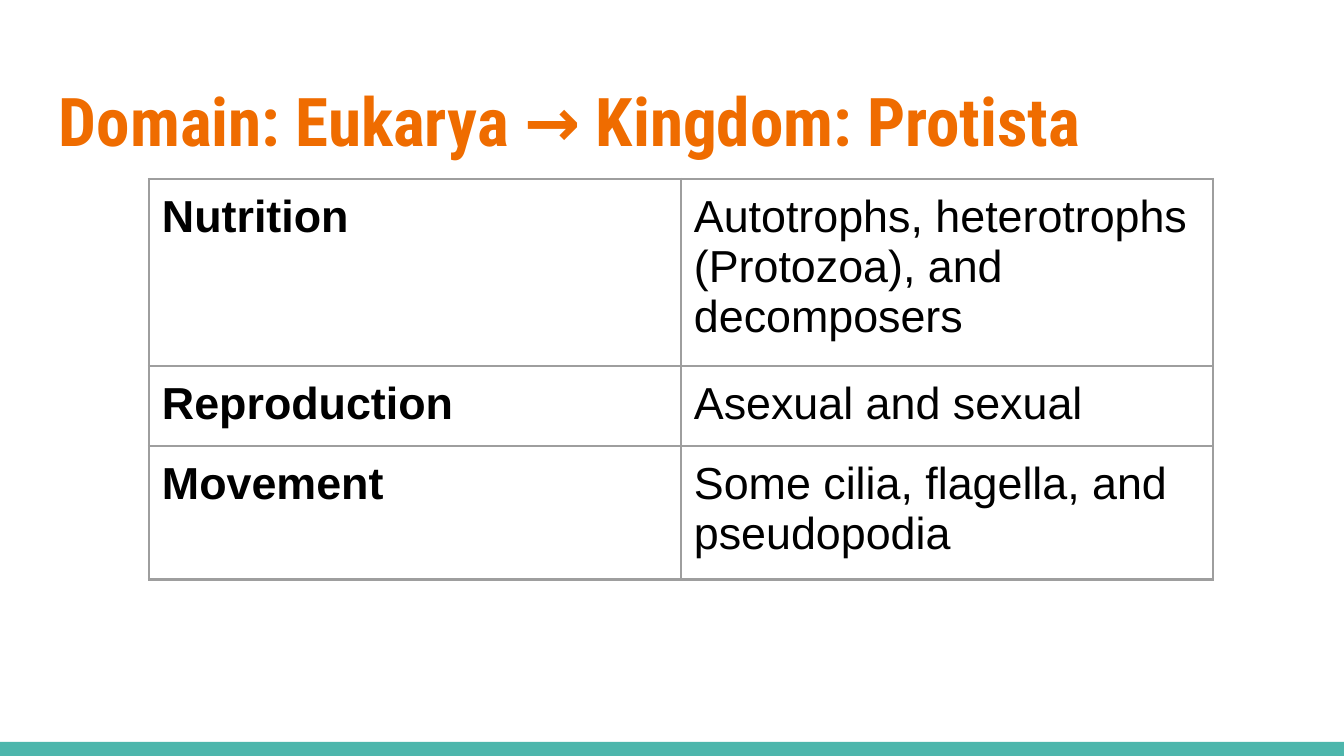
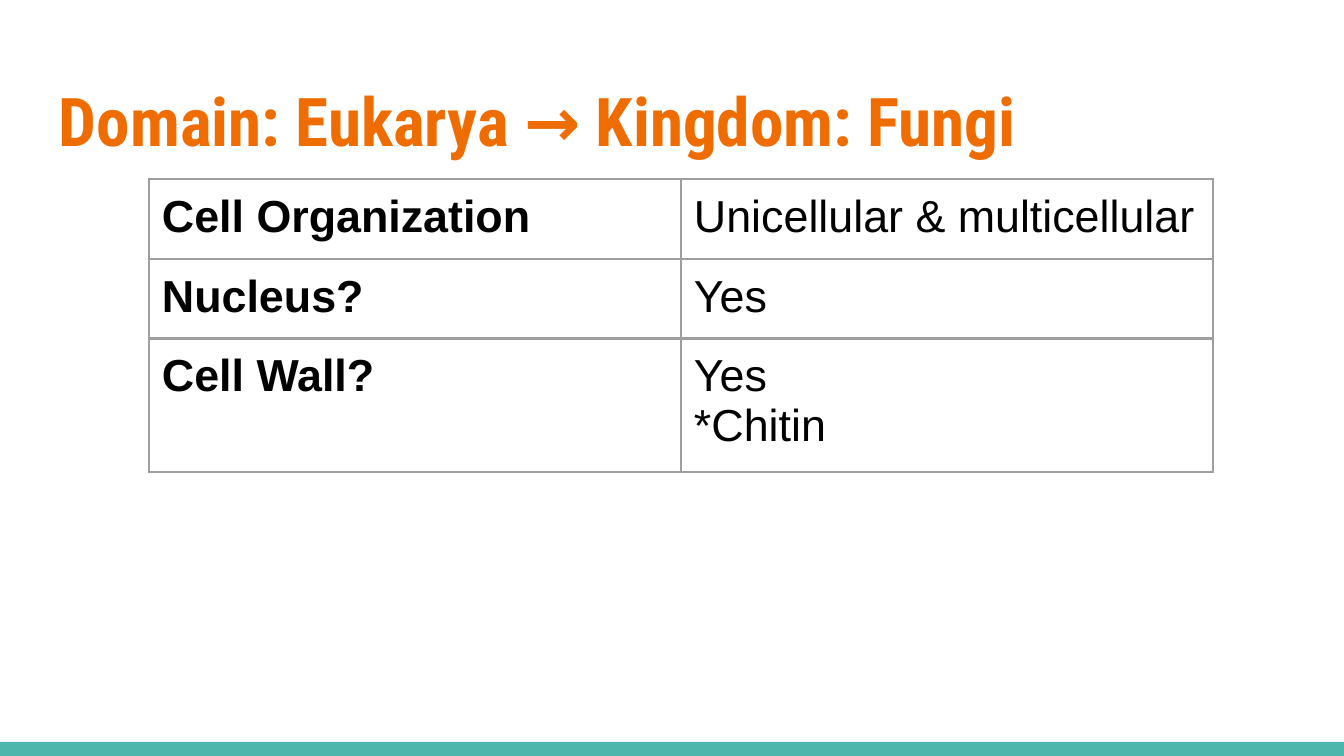
import pptx
import pptx.dml.color
import pptx.enum.shapes
import pptx.enum.text
import pptx.oxml
import pptx.oxml.ns
import pptx.util

EMU_PER_PX = 914400 / 134.4
SLIDE_W, SLIDE_H = 1344, 756
BAND_H = 14
INSET = 13
TABLE_X, TABLE_Y = 149, 179
COL_W, ROW_H = 532, 56
TEAL, ORANGE, GREY, BLACK = "4DB6AC", "EF6C00", "9E9E9E", "000000"
TITLE_FONT, BODY_FONT = "Roboto Condensed", "Arial"

PROTISTA = [
    ("Nutrition", "Autotrophs, heterotrophs (Protozoa), and decomposers"),
    ("Reproduction", "Asexual and sexual"),
    ("Movement", "Some cilia, flagella, and pseudopodia"),
]
FUNGI = [
    ("Cell Organization", "Unicellular & multicellular"),
    ("Nucleus?", "Yes"),
    ("Cell Wall?", "Yes\n*Chitin"),
]


def px(n):
    """Turn pixels into EMU."""
    return pptx.util.Emu(round(n * EMU_PER_PX))


def color(value):
    """Turn a hex string into a colour."""
    return pptx.dml.color.RGBColor.from_string(value)


def write(tf, text, font, size, fill, bold):
    """Set the text of a frame and format its runs."""
    tf.text = text
    for p in tf.paragraphs:
        for r in p.runs:
            r.font.name = font
            r.font.size = pptx.util.Pt(size)
            r.font.color.rgb = color(fill)
            r.font.bold = bold


def set_margins(box):
    """Give a text frame or cell equal insets on all sides."""
    box.margin_left = box.margin_right = px(INSET)
    box.margin_top = box.margin_bottom = px(INSET)


def add_band(s):
    """Draw the band along the bottom edge."""
    sp = s.shapes.add_shape(
        pptx.enum.shapes.MSO_SHAPE.RECTANGLE,
        px(0), px(SLIDE_H - BAND_H), px(SLIDE_W), px(BAND_H))
    sp.shadow.inherit = False
    sp.fill.solid()
    sp.fill.fore_color.rgb = color(TEAL)
    sp.line.fill.background()


def add_title(s, text):
    """Write the slide title."""
    tf = s.shapes.add_textbox(px(46), px(66), px(1252), px(103)).text_frame
    tf.word_wrap = True
    tf.vertical_anchor = pptx.enum.text.MSO_ANCHOR.TOP
    set_margins(tf)
    write(tf, text, TITLE_FONT, 36, ORANGE, True)


def set_borders(cell):
    """Draw the same line on all four sides of a cell."""
    tc_pr = cell._tc.get_or_add_tcPr()
    ns = pptx.oxml.ns.nsdecls("a")
    for side in "LRTB":
        tc_pr.append(pptx.oxml.parse_xml(
            f'<a:ln{side} {ns} w="{pptx.util.Pt(1.5)}"><a:solidFill>'
            f'<a:srgbClr val="{GREY}"/></a:solidFill></a:ln{side}>'))


def add_traits(s, traits):
    """Add the table of trait names and descriptions."""
    table = s.shapes.add_table(
        len(traits), 2, px(TABLE_X), px(TABLE_Y),
        px(2 * COL_W), px(len(traits) * ROW_H)).table
    table.first_row = table.horz_banding = False
    for column in table.columns:
        column.width = px(COL_W)
    for i, trait in enumerate(traits):
        table.rows[i].height = px(ROW_H)
        for j, text in enumerate(trait):
            cell = table.cell(i, j)
            set_margins(cell)
            set_borders(cell)
            cell.fill.background()
            write(cell.text_frame, text, BODY_FONT, 24, BLACK, j == 0)


def add_kingdom(prs, kingdom, traits):
    """Add one slide about a kingdom."""
    s = prs.slides.add_slide(prs.slide_layouts[6])
    add_band(s)
    add_title(s, f"Domain: Eukarya → Kingdom: {kingdom}")
    add_traits(s, traits)


def main():
    """Build and save the presentation."""
    prs = pptx.Presentation()
    prs.slide_width, prs.slide_height = px(SLIDE_W), px(SLIDE_H)
    add_kingdom(prs, "Protista", PROTISTA)
    add_kingdom(prs, "Fungi", FUNGI)
    prs.save("out.pptx")


if __name__ == "__main__":
    main()
